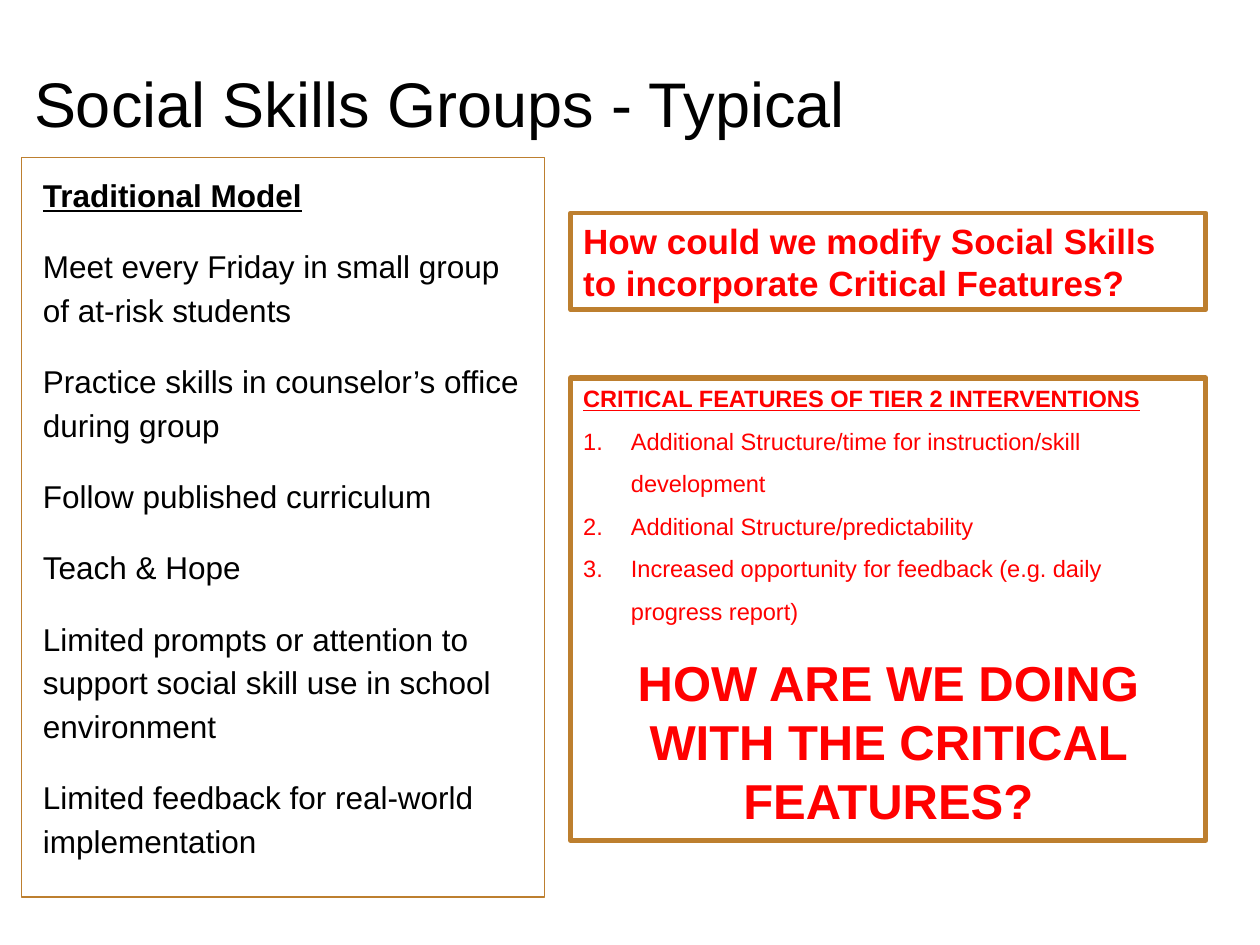
from pptx import Presentation
from pptx.dml.color import RGBColor
from pptx.enum.text import MSO_ANCHOR as Anchor, MSO_AUTO_SIZE as AutoSize, PP_ALIGN as Align
from pptx.oxml.ns import qn
from pptx.util import Inches, Pt
from lxml.etree import SubElement

# Content
TITLE = "Social Skills Groups - Typical"
MODEL_HEADING = "Traditional Model"
MODEL_POINTS = [
    "Meet every Friday in small group of at-risk students",
    "Practice skills in counselor’s office during group",
    "Follow published curriculum",
    "Teach & Hope",
    "Limited prompts or attention to support social skill use in school environment",
    "Limited feedback for real-world implementation",
]
QUESTION = "How could we modify Social Skills to incorporate Critical Features?"
FEATURES_HEADING = "CRITICAL FEATURES OF TIER 2 INTERVENTIONS"
FEATURES = [
    "Additional Structure/time for instruction/skill development",
    "Additional Structure/predictability",
    "Increased opportunity for feedback (e.g. daily progress report)",
]
CLOSING = "HOW ARE WE DOING WITH THE CRITICAL FEATURES?"

# Style and grid
FONT, BLACK, RED, BRONZE = "Arial", "000000", "FF0000", "BD7F2F"
LEFT, RIGHT, RIGHT_WIDTH = 0.17, 4.53, 5.04


def color(hex_code):
    return RGBColor.from_string(hex_code)


def place(box, left, top, width, height, inset=0.1, anchor=Anchor.TOP, fit=AutoSize.NONE):
    box.left, box.top, box.width, box.height = map(Inches, (left, top, width, height))
    frame = box.text_frame
    frame.word_wrap = True
    frame.auto_size = fit
    frame.vertical_anchor = anchor
    frame.margin_left = frame.margin_right = Inches(0.1)
    frame.margin_top = frame.margin_bottom = Inches(inset)


def outline(box, weight):
    box.line.color.rgb = color(BRONZE)
    box.line.width = Pt(weight)


def write(box, text, size, ink=BLACK, bold=False, underline=False, align=Align.LEFT,
          spacing=1.0, before=0, after=0, margin=0, indent=0, numbered=False):
    """Add one formatted paragraph, using the empty first one if it is free."""
    frame = box.text_frame
    para = frame.add_paragraph() if frame.text else frame.paragraphs[0]
    para.alignment = align
    para.line_spacing = spacing
    para.space_before, para.space_after = Pt(before), Pt(after)
    props = para._p.get_or_add_pPr()
    props.set("marL", str(Inches(margin)))
    props.set("indent", str(Inches(indent)))
    if numbered:
        SubElement(props, qn("a:buFont"), typeface=FONT)
        SubElement(props, qn("a:buAutoNum"), type="arabicPeriod")
    else:
        SubElement(props, qn("a:buNone"))
    span = para.add_run()
    span.text = text
    font = span.font
    font.name, font.size = FONT, Pt(size)
    font.bold, font.underline = bold, underline
    font.color.rgb = color(ink)


deck = Presentation()
deck.slide_width, deck.slide_height = Inches(10), Inches(7.5)
page = deck.slides.add_slide(deck.slide_layouts[1])

# Title
title = page.shapes.title
place(title, LEFT, 0.4, 8.02, 0.83, anchor=Anchor.MIDDLE)
write(title, TITLE, 36)

# Traditional model
model = page.placeholders[1]
place(model, LEFT, 1.25, 4.15, 5.87)
outline(model, 0.75)
for index, line in enumerate([MODEL_HEADING, *MODEL_POINTS]):
    heading = index == 0
    write(model, line, 18, bold=heading, underline=heading, spacing=1.15, after=16, margin=0.07)

# Critical features and question
features, question = (page.shapes.add_textbox(0, 0, 0, 0) for _ in range(2))
for box, top, height, weight in [(features, 3, 3.67, 3), (question, 1.69, 0.77, 2.75)]:
    place(box, RIGHT, top, RIGHT_WIDTH, height, inset=0.05, fit=AutoSize.SHAPE_TO_FIT_TEXT)
    outline(box, weight)

write(features, FEATURES_HEADING, 13.5, RED, bold=True, underline=True)
for feature in FEATURES:
    write(features, feature, 13.5, RED, spacing=1.5, margin=0.38, indent=-0.38, numbered=True)
write(features, CLOSING, 28, RED, bold=True, align=Align.CENTER, before=16)
write(question, QUESTION, 20, RED, bold=True)

deck.save("out.pptx")
